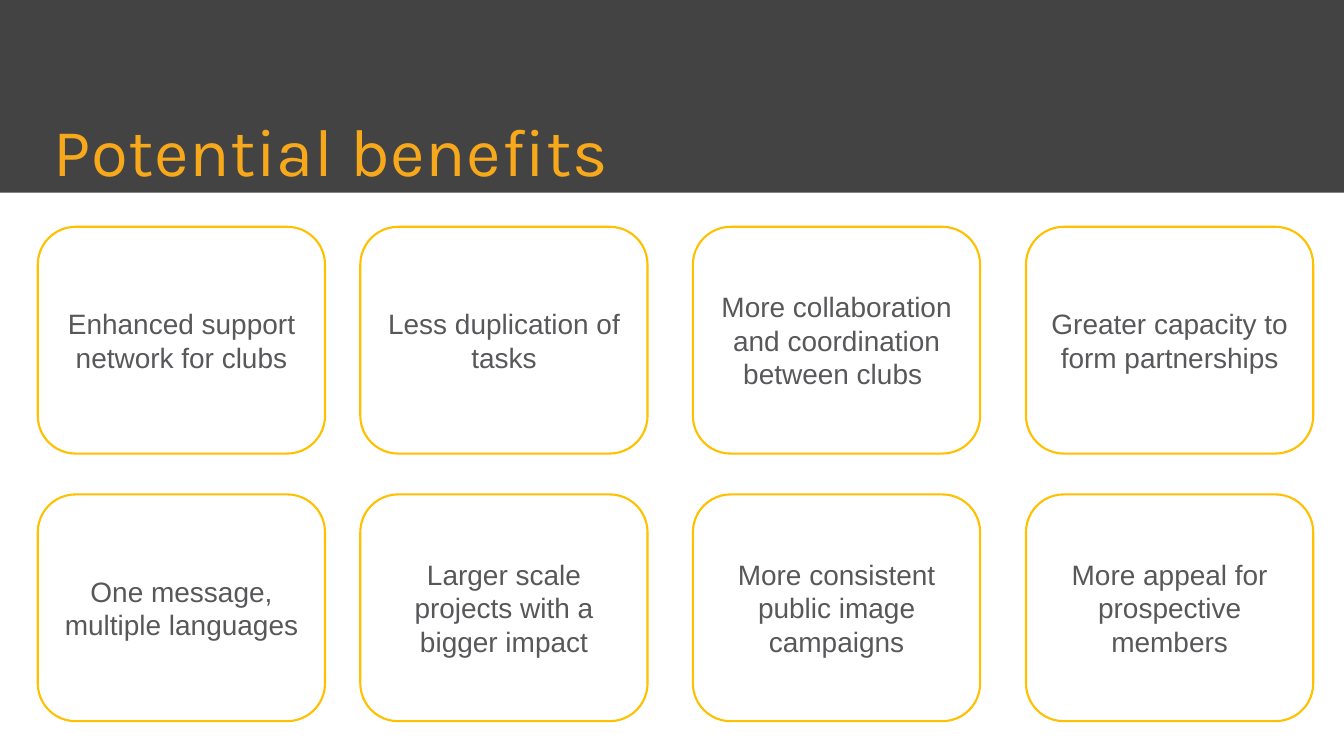
from dataclasses import dataclass

from pptx import Presentation
from pptx import util as u
from pptx.dml import color
from pptx.enum import shapes, text


@dataclass(frozen=True)
class Theme:
    band: str = "434343"
    title: str = "F7A81B"
    outline: str = "FFC000"
    body: str = "58585A"
    title_font: str = "Karla"
    body_font: str = "Arial"
    title_size: int = 96
    body_size: int = 40
    outline_width: int = 3


THEME = Theme()
SLIDE_WIDTH, SLIDE_HEIGHT = 26.67, 15
BAND_HEIGHT = 3.82
CARD_WIDTH, CARD_HEIGHT = 5.7, 4.5
COLUMNS = (0.75, 7.15, 13.75, 20.36)
ROWS = (4.5, 9.81)
BENEFITS = (
    (
        "Enhanced support network for clubs",
        "Less duplication of tasks",
        "More collaboration and coordination between clubs ",
        "Greater capacity to form partnerships",
    ),
    (
        "One message, multiple languages",
        "Larger scale projects with a bigger impact",
        "More consistent public image campaigns",
        "More appeal for prospective members",
    ),
)


def set_values(target, values):
    for name, value in values.items():
        setattr(target, name, value)


def inches(*lengths):
    return [u.Inches(length) for length in lengths]


def write_text(frame, words, side, edge, font, size, tint, paragraph):
    set_values(frame, {
        "word_wrap": True,
        "vertical_anchor": text.MSO_ANCHOR.MIDDLE,
        "margin_left": u.Inches(side),
        "margin_right": u.Inches(side),
        "margin_top": u.Inches(edge),
        "margin_bottom": u.Inches(edge),
    })
    para = frame.paragraphs[0]
    set_values(para, paragraph)
    span = para.add_run()
    span.text = words
    set_values(span.font, {"name": font, "size": u.Pt(size)})
    span.font.color.rgb = color.RGBColor.from_string(tint)
    return para, span


def add_header(page, left, top, width, height):
    band = page.shapes.add_shape(
        shapes.MSO_SHAPE.RECTANGLE, *inches(left, top, width, height))
    band.shadow.inherit = False
    band.fill.solid()
    band.fill.fore_color.rgb = color.RGBColor.from_string(THEME.band)
    band.line.fill.background()

    title_height = 1.32
    title = page.shapes.add_textbox(
        *inches(left, top + height - title_height, 24.39, title_height))
    para, span = write_text(
        title.text_frame, "Potential benefits", 0.06, 0.06,
        THEME.title_font, THEME.title_size, THEME.title, {"line_spacing": 0.7})
    title.text_frame.auto_size = text.MSO_AUTO_SIZE.SHAPE_TO_FIT_TEXT
    properties = para._p.get_or_add_pPr()
    properties.set("marL", str(u.Inches(1)))
    properties.set("indent", "0")
    span.font._element.set("spc", "90")


def add_card(page, left, top, width, height, words):
    card = page.shapes.add_shape(
        shapes.MSO_SHAPE.ROUNDED_RECTANGLE, *inches(left, top, width, height))
    card.shadow.inherit = False
    card.fill.background()
    card.line.color.rgb = color.RGBColor.from_string(THEME.outline)
    card.line.width = u.Pt(THEME.outline_width)
    write_text(
        card.text_frame, words, 0.1, 0.39, THEME.body_font, THEME.body_size,
        THEME.body, {"alignment": text.PP_ALIGN.CENTER})


def add_benefits(page):
    for top, benefits in zip(ROWS, BENEFITS):
        for left, words in zip(COLUMNS, benefits):
            add_card(page, left, top, CARD_WIDTH, CARD_HEIGHT, words)


def main():
    deck = Presentation()
    set_values(deck, {
        "slide_width": u.Inches(SLIDE_WIDTH),
        "slide_height": u.Inches(SLIDE_HEIGHT),
    })
    page = deck.slides.add_slide(deck.slide_layouts[6])
    add_header(page, 0, 0, SLIDE_WIDTH, BAND_HEIGHT)
    add_benefits(page)
    deck.save("out.pptx")


if __name__ == "__main__":
    main()
